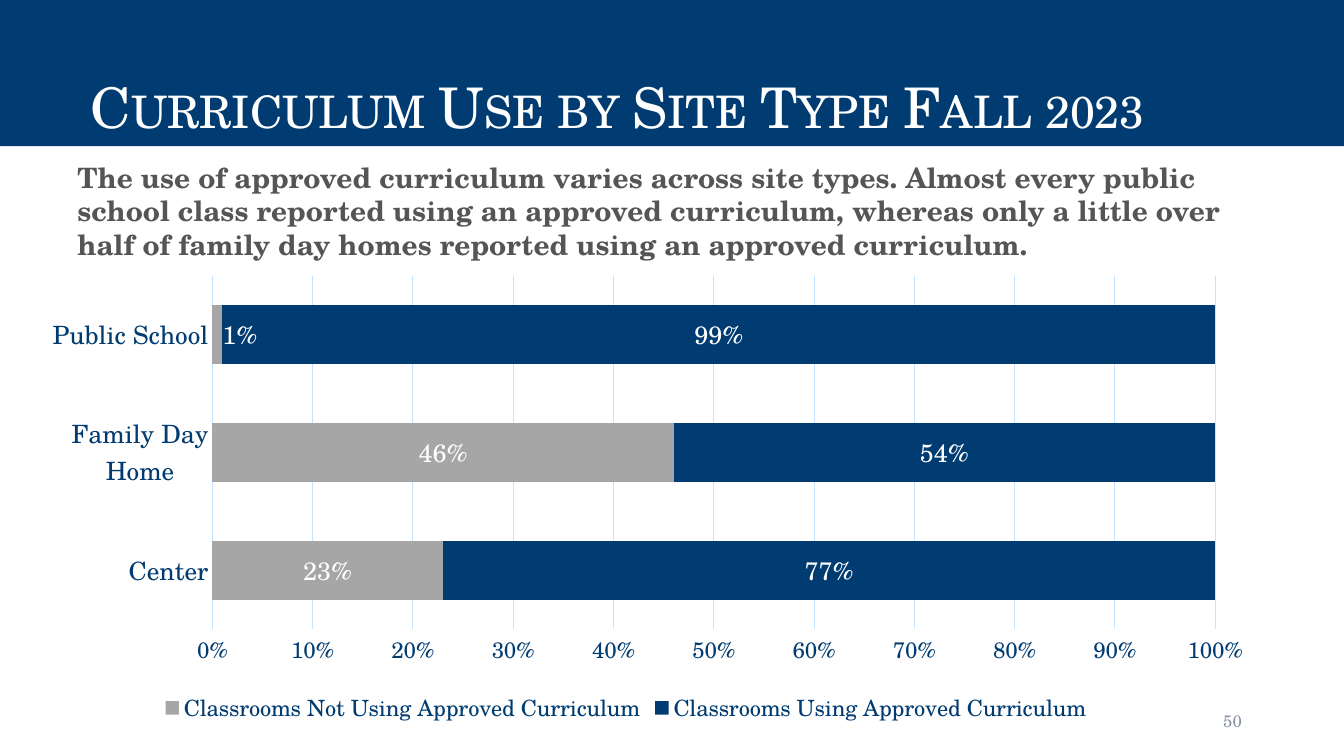
"""Build the slide on curriculum use by site type."""
from lxml import etree
from pptx import Presentation
from pptx.chart.data import CategoryChartData
from pptx.dml.color import RGBColor
from pptx.enum.chart import XL_CHART_TYPE, XL_LABEL_POSITION, XL_LEGEND_POSITION, XL_TICK_MARK
from pptx.enum.text import MSO_ANCHOR, PP_ALIGN
from pptx.oxml.ns import qn
from pptx.util import Pt

TITLE = "Curriculum Use by Site Type Fall 2023"
SUMMARY = (
    "The use of approved curriculum varies across site types. Almost every public "
    "school class reported using an approved curriculum, whereas only a little over "
    "half of family day homes reported using an approved curriculum."
)
PAGE_NUMBER = "50"
SITE_TYPES = ["Center", "Family Day Home", "Public School"]
SERIES = [
    ("Classrooms Not Using Approved Curriculum", "gray", [0.23, 0.46, 0.01]),
    ("Classrooms Using Approved Curriculum", "navy", [0.77, 0.54, 0.99]),
]
COLORS = {
    "navy": "003C71",
    "gray": "A6A6A6",
    "white": "FFFFFF",
    "text": "555555",
    "number": "888FA3",
    "grid": "C3E3FF",
}
FONT = "TeX Gyre Schola"
PERCENT = "0%"
SLIDE_SIZE = (960, 540)
TITLE_BOX = (0, 0, 960, 104.4)
SUMMARY_BOX = (48.24, 110.9, 875.5, 80)
NUMBER_BOX = (678.2, 500.4, 216, 28.8)
CHART_BOX = (2.2, 188.6, 889.9, 331.9)
PLOT_LAYOUT = {
    "layoutTarget": "inner", "xMode": "edge", "yMode": "edge",
    "x": 0.168, "y": 0.025, "w": 0.805, "h": 0.761,
}
SMALL_BAR_LABEL_LAYOUT = {"x": 0.018, "y": 0}
SMALL_BAR_INDEX = SITE_TYPES.index("Public School")

BAR_STACKED_100 = XL_CHART_TYPE.BAR_STACKED_100
LABEL_CENTER = XL_LABEL_POSITION.CENTER
LEGEND_BOTTOM = XL_LEGEND_POSITION.BOTTOM
NO_TICK = XL_TICK_MARK.NONE
LEFT, RIGHT = PP_ALIGN.LEFT, PP_ALIGN.RIGHT
TOP, MIDDLE, BOTTOM = MSO_ANCHOR.TOP, MSO_ANCHOR.MIDDLE, MSO_ANCHOR.BOTTOM


def color(name):
    return RGBColor.from_string(COLORS[name])


def points(lengths):
    return [Pt(length) for length in lengths]


def style_font(font, size, color_name, bold=False):
    font.name = FONT
    font.size = Pt(size)
    font.bold = bold
    font.color.rgb = color(color_name)


def style_line(line):
    line.color.rgb = color("grid")
    line.width = Pt(0.75)


def write(box, text, size, color_name, align, anchor, bold=False):
    frame = box.text_frame
    frame.word_wrap = True
    frame.vertical_anchor = anchor
    frame.text = text
    para = frame.paragraphs[0]
    para.alignment = align
    style_font(para.font, size, color_name, bold)
    return para


def add_text(page, place, *content, **options):
    box = page.shapes.add_textbox(*points(place))
    write(box, *content, **options)


def fill_title(page):
    box = page.shapes.title
    box.left, box.top, box.width, box.height = points(TITLE_BOX)
    box.fill.solid()
    box.fill.fore_color.rgb = color("navy")
    para = write(box, TITLE, 40, "white", LEFT, BOTTOM)
    para.line_spacing = 0.9
    para._p.pPr.find(qn("a:defRPr")).set("cap", "small")
    box.text_frame.margin_left = Pt(64.8)


def set_layout(parent, position, values):
    for old in parent.findall(qn("c:layout")):
        parent.remove(old)
    layout = etree.Element(qn("c:layout"))
    manual = etree.SubElement(layout, qn("c:manualLayout"))
    for name, value in values.items():
        etree.SubElement(manual, qn(f"c:{name}")).set("val", str(value))
    parent.insert(position, layout)


def style_axes(chart):
    category_axis, value_axis = chart.category_axis, chart.value_axis
    for axis in (category_axis, value_axis):
        axis.major_tick_mark = axis.minor_tick_mark = NO_TICK
    category_axis.has_major_gridlines = False
    style_font(category_axis.tick_labels.font, 18, "navy")
    style_line(category_axis.format.line)
    style_font(value_axis.tick_labels.font, 16, "navy")
    value_axis.has_major_gridlines = True
    style_line(value_axis.major_gridlines.format.line)
    value_axis.format.line.fill.background()
    value_axis.tick_labels.number_format = PERCENT
    value_axis.tick_labels.number_format_is_linked = False
    value_axis.minimum_scale, value_axis.maximum_scale = 0, 1
    value_axis.major_unit = 0.1


def style_series(series, color_name):
    series.format.fill.solid()
    series.format.fill.fore_color.rgb = color(color_name)
    labels = series.data_labels
    labels.show_value = True
    labels.number_format = PERCENT
    labels.number_format_is_linked = False
    labels.position = LABEL_CENTER
    style_font(labels.font, 18, "white")


def shift_small_bar_label(series):
    label = series.points[SMALL_BAR_INDEX].data_label
    style_font(label.font, 18, "white")
    label.position = LABEL_CENTER
    element = series.data_labels._element.find(qn("c:dLbl"))
    set_layout(element, 1, SMALL_BAR_LABEL_LAYOUT)


def add_site_chart(page):
    data = CategoryChartData(number_format=PERCENT)
    data.categories = SITE_TYPES
    for name, _, values in SERIES:
        data.add_series(name, values)
    chart = page.shapes.add_chart(BAR_STACKED_100, *points(CHART_BOX), data).chart
    style_font(chart.font, 16, "navy")
    chart.has_title = False
    chart.has_legend = True
    chart.legend.position = LEGEND_BOTTOM
    chart.legend.include_in_layout = False
    style_font(chart.legend.font, 16, "navy")
    style_axes(chart)
    plot = chart.plots[0]
    plot.gap_width = plot.overlap = 100
    plot.vary_by_categories = False
    for series, (_, color_name, _) in zip(plot.series, SERIES):
        style_series(series, color_name)
    shift_small_bar_label(plot.series[0])
    set_layout(chart._chartSpace.chart.plotArea, 0, PLOT_LAYOUT)


def main():
    deck = Presentation()
    deck.slide_width, deck.slide_height = points(SLIDE_SIZE)
    page = deck.slides.add_slide(deck.slide_layouts[5])
    fill_title(page)
    add_text(page, NUMBER_BOX, PAGE_NUMBER, 12, "number", RIGHT, MIDDLE)
    add_site_chart(page)
    add_text(page, SUMMARY_BOX, SUMMARY, 20, "text", LEFT, TOP, bold=True)
    deck.save("out.pptx")


if __name__ == "__main__":
    main()
